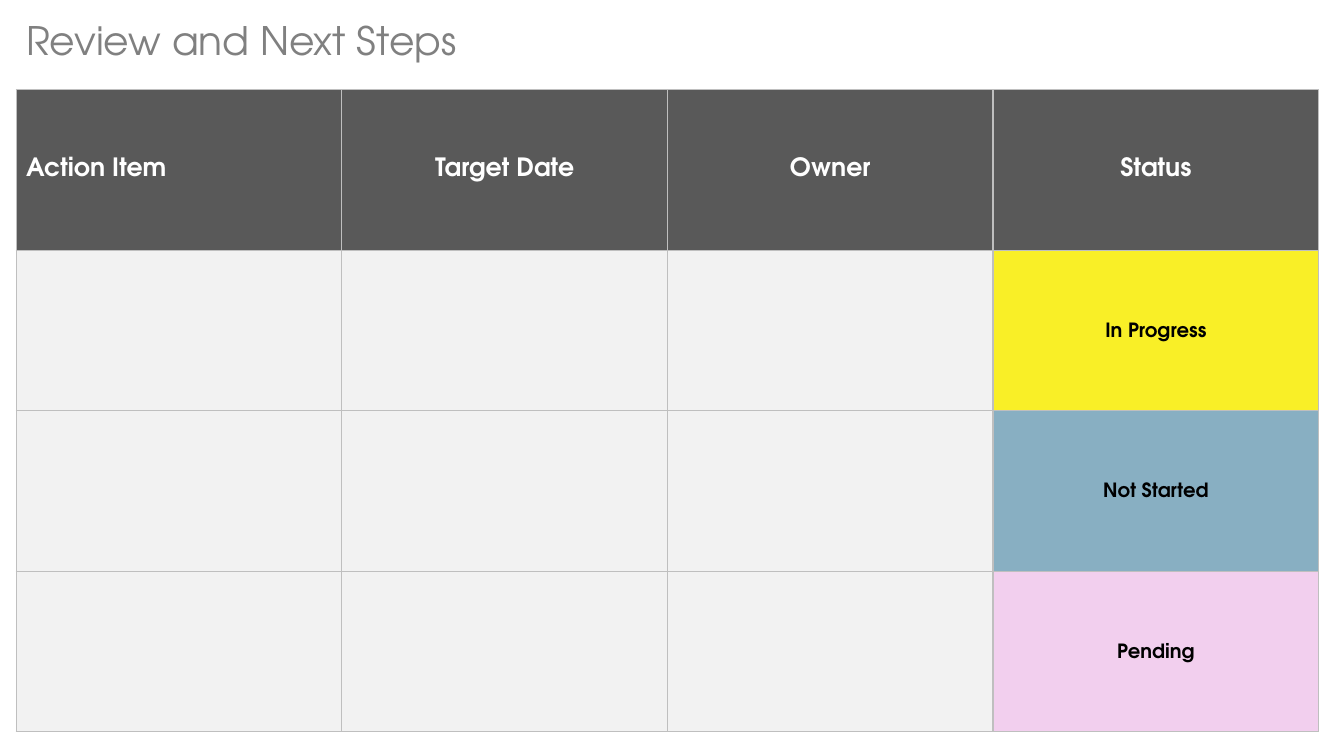
from lxml import etree
from pptx import Presentation
from pptx import util as u
from pptx.dml.color import RGBColor
from pptx.enum import text
from pptx.oxml import ns

WHITE = RGBColor(0xFF, 0xFF, 0xFF)
BLACK = RGBColor(0, 0, 0)
TITLE_GRAY = RGBColor(0x80, 0x80, 0x80)
HEADER_GRAY = RGBColor(0x59, 0x59, 0x59)
ROW_GRAY = RGBColor(0xF2, 0xF2, 0xF2)
BORDER_GRAY = RGBColor(0xBF, 0xBF, 0xBF)
YELLOW = RGBColor(0xF9, 0xEF, 0x27)
BLUE = RGBColor(0x88, 0xAF, 0xC2)
PINK = RGBColor(0xF2, 0xCF, 0xEE)

HEADINGS = ["Action Item", "Target Date", "Owner", "Status"]
STATUSES = [("In Progress", YELLOW), ("Not Started", BLUE), ("Pending", PINK)]
LEFT, CENTER = text.PP_ALIGN.LEFT, text.PP_ALIGN.CENTER
STATUS_SPACING = {"line_spacing": 1.15, "space_after": u.Pt(8)}
STATUS_MARGINS = {"margin_left": u.Inches(0.07), "margin_right": u.Inches(0.07),
                  "margin_top": 0, "margin_bottom": 0}


def apply(target, formats):
    for name, value in formats.items():
        setattr(target, name, value)


class ReviewSlide:
    """Hold the shared style and the slide that receives each element."""

    font = "TeX Gyre Adventor"

    def __init__(self, deck):
        self.slide = deck.slides.add_slide(deck.slide_layouts[5])

    def wording(self, paragraph, words, size, color, bold, **formats):
        apply(paragraph, formats)
        run = paragraph.add_run()
        run.text = words
        apply(run.font, {"name": self.font, "size": u.Pt(size), "bold": bold})
        run.font.color.rgb = color

    def title(self, words, left, top, width, height):
        heading = self.slide.shapes.title
        apply(heading, {"left": u.Inches(left), "top": u.Inches(top),
                        "width": u.Inches(width), "height": u.Inches(height)})
        apply(heading.text_frame, {"word_wrap": True,
                                   "auto_size": text.MSO_AUTO_SIZE.SHAPE_TO_FIT_TEXT,
                                   "vertical_anchor": text.MSO_ANCHOR.TOP})
        self.wording(heading.text_frame.paragraphs[0], words, 28, TITLE_GRAY, False,
                     alignment=LEFT, space_before=u.Pt(0))

    def table(self, rows, columns, left, top, width, height):
        frame = self.slide.shapes.add_table(rows, columns, u.Inches(left), u.Inches(top),
                                            u.Inches(width), u.Inches(height))
        for cell in frame.table.iter_cells():
            self.borders(cell)
            self.fill(cell, ROW_GRAY)
            cell.vertical_anchor = text.MSO_ANCHOR.MIDDLE
        return frame.table

    def fill(self, cell, color):
        cell.fill.solid()
        cell.fill.fore_color.rgb = color

    def borders(self, cell):
        properties = cell._tc.get_or_add_tcPr()
        for side in ("lnL", "lnR", "lnT", "lnB"):
            edge = etree.SubElement(properties, ns.qn(f"a:{side}"), w=str(u.Pt(1)))
            solid = etree.SubElement(edge, ns.qn("a:solidFill"))
            etree.SubElement(solid, ns.qn("a:srgbClr"), val=str(BORDER_GRAY))

    def header(self, cell, words, alignment):
        self.fill(cell, HEADER_GRAY)
        self.wording(cell.text_frame.paragraphs[0], words, 18, WHITE, True,
                     alignment=alignment)

    def status(self, cell, words, color):
        self.fill(cell, color)
        apply(cell, STATUS_MARGINS)
        self.wording(cell.text_frame.paragraphs[0], words, 14, BLACK, True,
                     alignment=CENTER, **STATUS_SPACING)


def main():
    deck = Presentation()
    apply(deck, {"slide_width": u.Inches(13.33), "slide_height": u.Inches(7.5)})
    review = ReviewSlide(deck)
    actions = review.table(len(STATUSES) + 1, len(HEADINGS), 0.16, 0.89, 12.92, 6.37)
    for column, heading in enumerate(HEADINGS):
        review.header(actions.cell(0, column), heading, CENTER if column else LEFT)
    for row, (status, color) in enumerate(STATUSES, start=1):
        review.status(actions.cell(row, len(HEADINGS) - 1), status, color)
    review.title("Review and Next Steps", 0.16, 0.11, 8.08, 0.57)
    deck.save("out.pptx")


if __name__ == "__main__":
    main()
